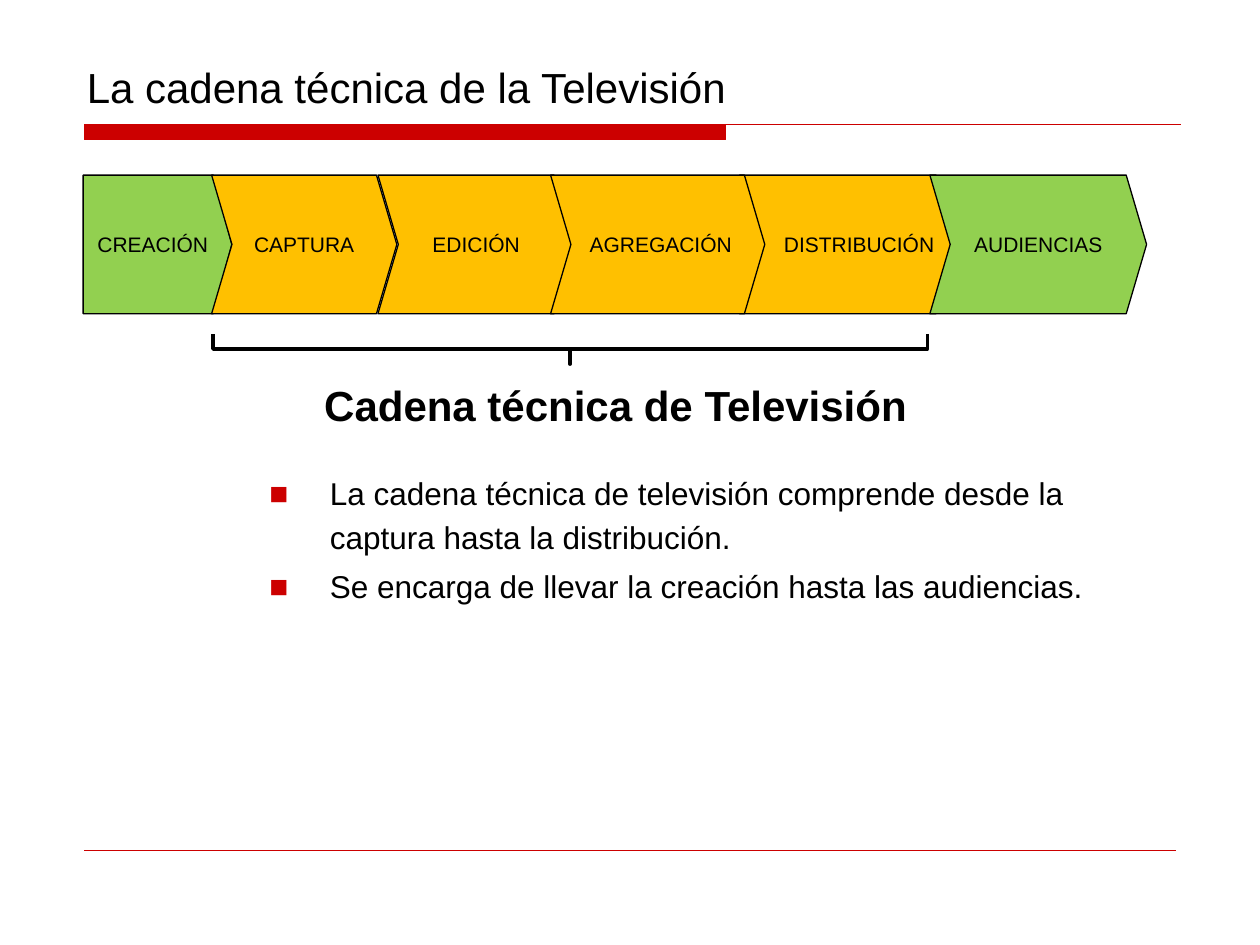
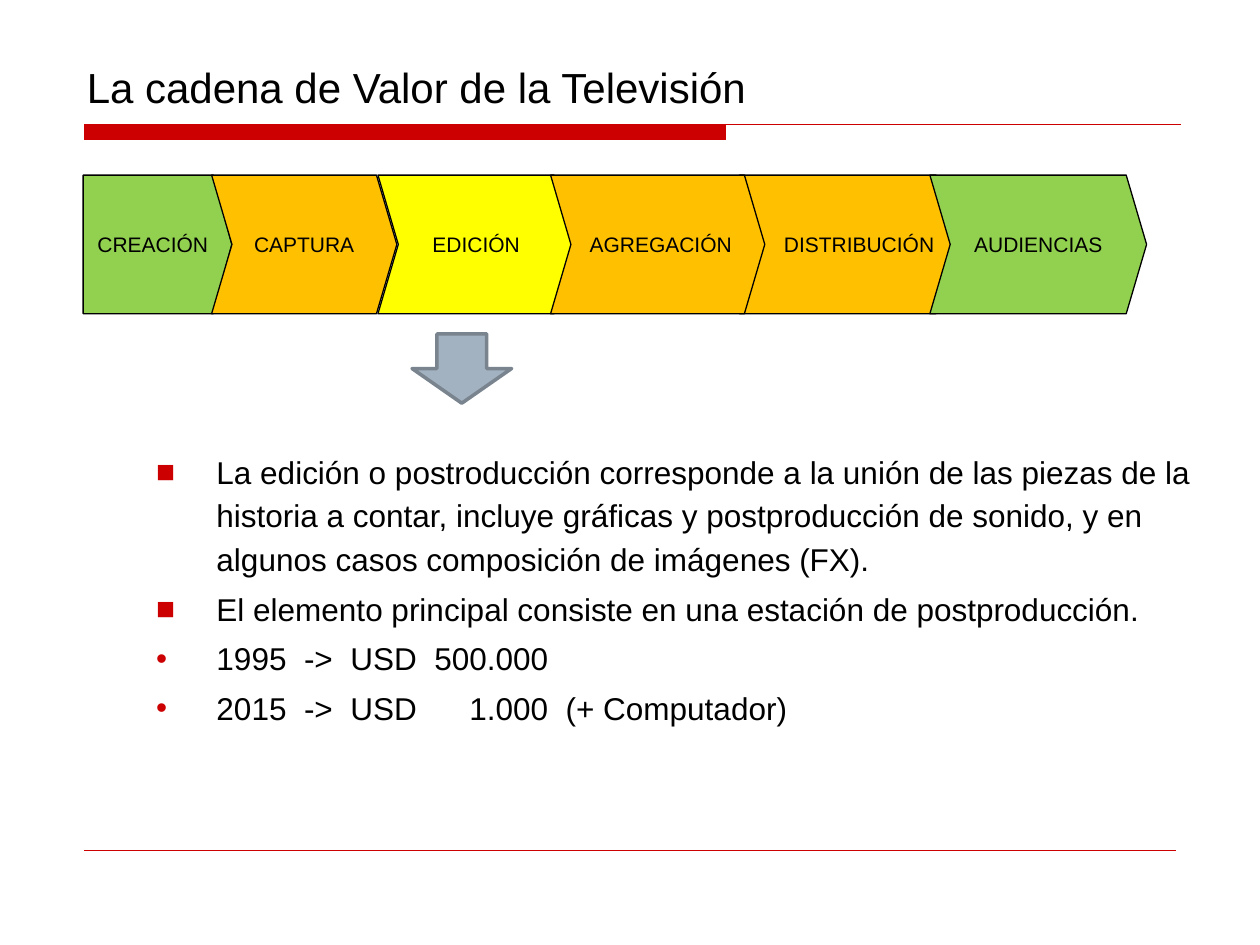
from lxml import etree
from pptx import Presentation
from pptx.dml.color import RGBColor
from pptx.enum import shapes, text
from pptx.oxml import ns
from pptx.util import Inches, Pt

FONT = "Arial"
BLACK = RGBColor(0x00, 0x00, 0x00)
RED = RGBColor(0xCC, 0x00, 0x00)
AMBER = RGBColor(0xFF, 0xC0, 0x00)
YELLOW = RGBColor(0xFF, 0xFF, 0x00)
GREEN = RGBColor(0x92, 0xD0, 0x50)
STEEL = RGBColor(0xA3, 0xB2, 0xC1)
DARK_STEEL = RGBColor(0x79, 0x84, 0x8F)

SHAPE = shapes.MSO_SHAPE
ALIGN = text.PP_ALIGN
SQUARE, DOT = "■", "•"
SPACE_WIDTH = 5

STAGES = [
    ("DISTRIBUCIÓN", 5.21, 1.72, AMBER, ALIGN.LEFT),
    ("CREACIÓN", 0, 1.18, GREEN, ALIGN.CENTER),
    ("CAPTURA", 1.02, 1.47, AMBER, ALIGN.CENTER),
    ("EDICIÓN", 2.34, 1.56, AMBER, ALIGN.CENTER),
    ("AGREGACIÓN", 3.71, 1.7, AMBER, ALIGN.RIGHT),
    ("AUDIENCIAS", 6.72, 1.72, GREEN, ALIGN.LEFT),
]


def add_run(paragraph, wording, size, bold=False):
    """Append a black run to a paragraph and return it."""
    run = paragraph.add_run()
    run.text = wording
    run.font.name = FONT
    run.font.size = Pt(size)
    run.font.bold = bold
    run.font.color.rgb = BLACK
    return run


def add_gap(paragraph, width, size):
    """Append one space widened to the given number of points."""
    run = add_run(paragraph, " ", size)
    run.font._element.set("spc", str((width - SPACE_WIDTH) * 100))


def add_preset(slide, preset, box, fill, line, line_width):
    """Draw a preset shape in a box of inches, without shadow."""
    shape = slide.shapes.add_shape(preset, *map(Inches, box))
    shape.shadow.inherit = False
    if fill is None:
        shape.fill.background()
    else:
        shape.fill.solid()
        shape.fill.fore_color.rgb = fill
    shape.line.color.rgb = line
    shape.line.width = Pt(line_width)
    return shape


def add_rule(slide, left, top, width):
    """Draw a thin red horizontal line."""
    rule = slide.shapes.add_connector(
        shapes.MSO_CONNECTOR.STRAIGHT, Inches(left), Inches(top), Inches(left + width), Inches(top))
    rule.line.color.rgb = RED
    rule.line.width = Pt(0.75)
    etree.SubElement(rule._element.spPr, ns.qn("a:effectLst"))


def add_text_frame(slide, box):
    """Add a wrapping text box and return its text frame."""
    frame = slide.shapes.add_textbox(*map(Inches, box)).text_frame
    frame.word_wrap = True
    return frame


def add_heading(slide, box, wording, alignment=ALIGN.LEFT, bold=False):
    """Write a one-line heading."""
    paragraph = add_text_frame(slide, box).paragraphs[0]
    paragraph.alignment = alignment
    add_run(paragraph, wording, 24, bold)


def add_frame(slide, title):
    """Add the title, the red band below it and the footer line."""
    left, band_top = 0.67, 0.99
    add_preset(slide, SHAPE.RECTANGLE, (left, band_top, 5.09, 0.12), RED, RED, 0.75)
    add_rule(slide, left, band_top, 8.7)
    add_rule(slide, left, 6.75, 8.66)
    add_heading(slide, (0.59, 0.44, 7.72, 0.5), title)


def add_chain(slide, left, top, highlighted=None):
    """Draw the row of stages, with one optionally in yellow."""
    for name, offset, width, color, alignment in STAGES:
        preset, point = (SHAPE.CHEVRON, 0.147) if offset else (SHAPE.PENTAGON, 0.134)
        fill = YELLOW if name == highlighted else color
        stage = add_preset(slide, preset, (left + offset, top, width, 1.1), fill, BLACK, 0.75)
        stage.adjustments[0] = point
        frame = stage.text_frame
        frame.word_wrap = False
        frame.vertical_anchor = text.MSO_ANCHOR.MIDDLE
        if alignment == ALIGN.LEFT:
            frame.margin_left, frame.margin_right = Inches(0.19), 0
        frame.paragraphs[0].alignment = alignment
        add_run(frame.paragraphs[0], name, 12)


def set_bullet(paragraph, mark):
    """Give a paragraph a hanging red bullet."""
    properties = paragraph._element.get_or_add_pPr()
    properties.set("marL", str(Inches(0.99)))
    properties.set("indent", str(Inches(-0.48)))
    color = etree.SubElement(properties, ns.qn("a:buClr"))
    etree.SubElement(color, ns.qn("a:srgbClr"), val=str(RED))
    etree.SubElement(properties, ns.qn("a:buFont"), typeface=FONT)
    etree.SubElement(properties, ns.qn("a:buChar"), char=mark)


def add_bullets(slide, box, items):
    """Write bulleted items, whose parts are wordings or gap widths."""
    frame = add_text_frame(slide, box)
    for index, (mark, *parts) in enumerate(items):
        paragraph = frame.add_paragraph() if index else frame.paragraphs[0]
        set_bullet(paragraph, mark)
        paragraph.line_spacing = 1.15
        if index:
            paragraph.space_before = Pt(3.6)
        for part in parts:
            if isinstance(part, str):
                add_run(paragraph, part, 18)
            else:
                add_gap(paragraph, part, 18)


def add_bracket(slide, left, top, width, height):
    """Draw a bracket that opens upwards and points down."""
    box = (left + (width - height) / 2, top + (height - width) / 2, height, width)
    bracket = add_preset(slide, SHAPE.LEFT_BRACE, box, None, BLACK, 2)
    bracket.adjustments[0] = 0
    bracket.rotation = 270


def build_technical_chain(slide):
    """Build the slide on the technical chain."""
    add_frame(slide, "La cadena técnica de la Televisión")
    add_chain(slide, 0.66, 1.39)
    add_bracket(slide, 1.69, 2.65, 5.67, 0.24)
    add_heading(slide, (1.54, 2.96, 6.69, 0.5), "Cadena técnica de Televisión", ALIGN.CENTER, True)
    add_bullets(slide, (1.53, 3.67, 7.32, 2.99), [
        (SQUARE, "La cadena técnica de televisión comprende desde la captura hasta la distribución."),
        (SQUARE, "Se encarga de llevar la creación hasta las audiencias."),
    ])


def build_value_chain(slide):
    """Build the slide on editing within the value chain."""
    add_frame(slide, "La cadena de Valor de la Televisión")
    add_preset(slide, SHAPE.DOWN_ARROW, (3.27, 2.65, 0.79, 0.55), STEEL, DARK_STEEL, 2)
    add_bullets(slide, (0.63, 3.5, 9.1, 3.25), [
        (SQUARE, "La edición o postroducción corresponde a la unión de las piezas de la historia a contar, "
                 "incluye gráficas y postproducción de sonido, y en algunos casos composición de "
                 "imágenes (FX)."),
        (SQUARE, "El elemento principal consiste en una estación de postproducción."),
        (DOT, "1995", 10, "->", 10, "USD", 10, "500.000"),
        (DOT, "2015", 10, "->", 10, "USD", 30, "1.000", 10, "(+ Computador)"),
    ])
    add_chain(slide, 0.66, 1.39, "EDICIÓN")


def main():
    """Build and save the presentation."""
    presentation = Presentation()
    presentation.slide_width = Inches(10)
    presentation.slide_height = Inches(7.5)
    for build in (build_technical_chain, build_value_chain):
        build(presentation.slides.add_slide(presentation.slide_layouts[6]))
    presentation.save("out.pptx")


if __name__ == "__main__":
    main()
